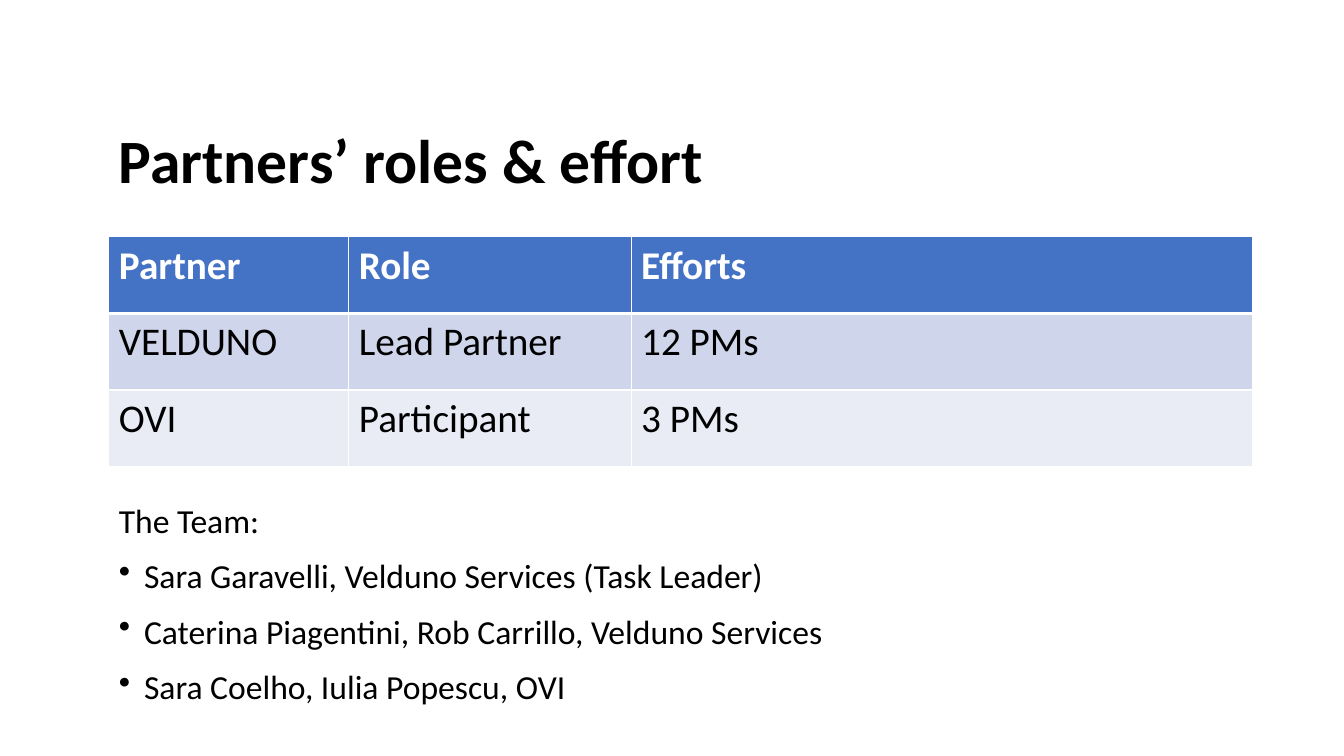
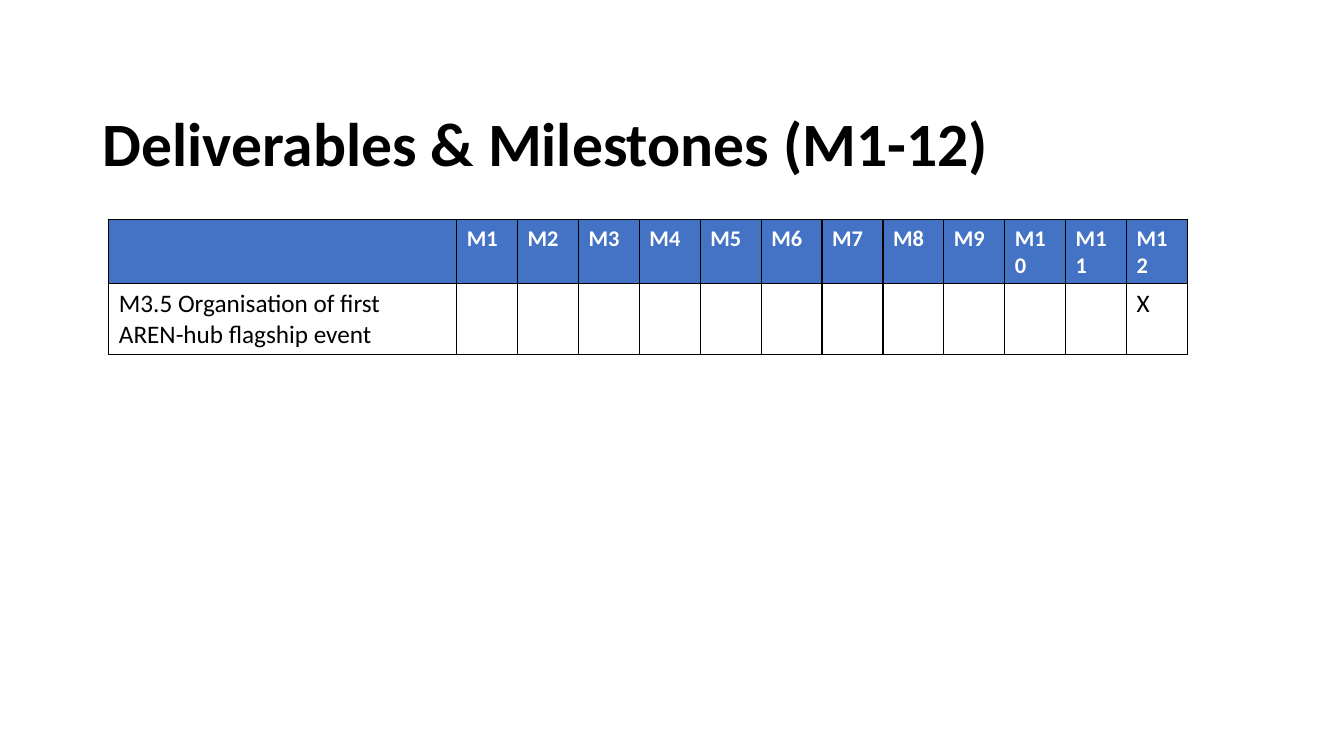
from dataclasses import dataclass

from lxml import etree
from pptx import Presentation, util as u
from pptx.dml.color import RGBColor
from pptx.enum import text
from pptx.oxml import ns

PX = 9144  # 100 px to the inch


@dataclass(frozen=True)
class Theme:
    font: str = "Calibri"
    ink: str = "000000"
    paper: str = "FFFFFF"
    accent: str = "4472C4"
    bands: tuple = ("CFD5EA", "E9EBF5")
    title: int = 44
    list: int = 24


THEME = Theme()

# Content
ROLES_TITLE = "Partners’ roles & effort"
ROLES = [
    ("Partner", "Role", "Efforts"),
    ("VELDUNO", "Lead Partner", "12 PMs"),
    ("OVI", "Participant", "3 PMs"),
]
TEAM_HEADING = "The Team:"
TEAM = [
    "Sara Garavelli, Velduno Services (Task Leader)",
    "Caterina Piagentini, Rob Carrillo, Velduno Services",
    "Sara Coelho, Iulia Popescu, OVI",
]
PLAN_TITLE = "Deliverables & Milestones (M1-12)"
MONTHS = 12
MILESTONES = [("M3.5 Organisation of first AREN-hub flagship event", 12)]
PLAN = [[""] + [f"M{month}" for month in range(1, MONTHS + 1)]] + [
    [name] + ["X" if month == due else "" for month in range(1, MONTHS + 1)]
    for name, due in MILESTONES
]


def px(length):
    return u.Emu(round(length * PX))


def style_font(para, size, color=THEME.ink, bold=False):
    font = para.font
    font.name, font.size, font.bold = THEME.font, u.Pt(size), bold
    font.color.rgb = RGBColor.from_string(color)


def add_text_frame(page, left, top, width, height):
    frame = page.shapes.add_textbox(*map(px, (left, top, width, height))).text_frame
    frame.word_wrap = True
    return frame


def add_title(page, title, left, top):
    frame = add_text_frame(page, left, top, 1150, 145)
    frame.vertical_anchor = text.MSO_ANCHOR.MIDDLE
    para = frame.paragraphs[0]
    para.text = title
    para.line_spacing = 0.9
    style_font(para, THEME.title, bold=True)


def add_border(cell, side, color, points):
    props = cell._tc.get_or_add_tcPr()
    line = etree.SubElement(props, ns.qn(f"a:ln{side}"), w=str(u.Pt(points)))
    fill = etree.SubElement(line, ns.qn("a:solidFill"))
    etree.SubElement(fill, ns.qn("a:srgbClr"), val=color)


def add_grid(page, rows, left, top, columns, row_height, sizes, border, rule, bands):
    """Table with an accent header; rule is the line width below the header."""
    table = page.shapes.add_table(
        len(rows), len(columns), px(left), px(top),
        px(sum(columns)), px(row_height * len(rows))).table
    table.horz_banding = False
    for column, width in zip(table.columns, columns):
        column.width = px(width)
    for r, row in enumerate(rows):
        header = r == 0
        for c, value in enumerate(row):
            cell = table.cell(r, c)
            cell.text = value
            style_font(cell.text_frame.paragraphs[0], sizes[min(r, 1)],
                       THEME.paper if header else THEME.ink, header)
            widths = {"L": 1, "R": 1, "T": rule if r == 1 else 1, "B": rule if header else 1}
            for side, points in widths.items():
                add_border(cell, side, border, points)
            cell.fill.solid()
            color = THEME.accent if header else bands[(r - 1) % len(bands)]
            cell.fill.fore_color.rgb = RGBColor.from_string(color)


def add_team(page, left, top, width, height):
    frame = add_text_frame(page, left, top, width, height)
    for i, line in enumerate([TEAM_HEADING] + TEAM):
        para = frame.paragraphs[0] if i == 0 else frame.add_paragraph()
        para.text = line
        para.line_spacing = 1.2
        para.space_before = u.Pt(5)
        style_font(para, THEME.list)
        if i:
            props = para._p.get_or_add_pPr()
            props.set("marL", str(px(25)))
            props.set("indent", str(px(-25)))
            bullet = etree.Element(ns.qn("a:buChar"), char="•")
            props.find(ns.qn("a:defRPr")).addprevious(bullet)


def main():
    deck = Presentation()
    deck.slide_width, deck.slide_height = px(1333), px(750)
    blank = deck.slide_layouts[6]

    # Partners, their effort and the team
    page = deck.slides.add_slide(blank)
    add_grid(page, ROLES, 108, 235, [238, 280, 616], 76, (28, 28),
             border=THEME.paper, rule=3, bands=THEME.bands)
    add_title(page, ROLES_TITLE, 108, 90)
    add_team(page, 108, 483, 1151, 225)

    # Milestones by month
    page = deck.slides.add_slide(blank)
    add_title(page, PLAN_TITLE, 92, 73)
    add_grid(page, PLAN, 108, 218, [345] + [60.4] * MONTHS, 61, (16, 18),
             border=THEME.ink, rule=1, bands=(THEME.paper,))

    deck.save("out.pptx")


if __name__ == "__main__":
    main()
